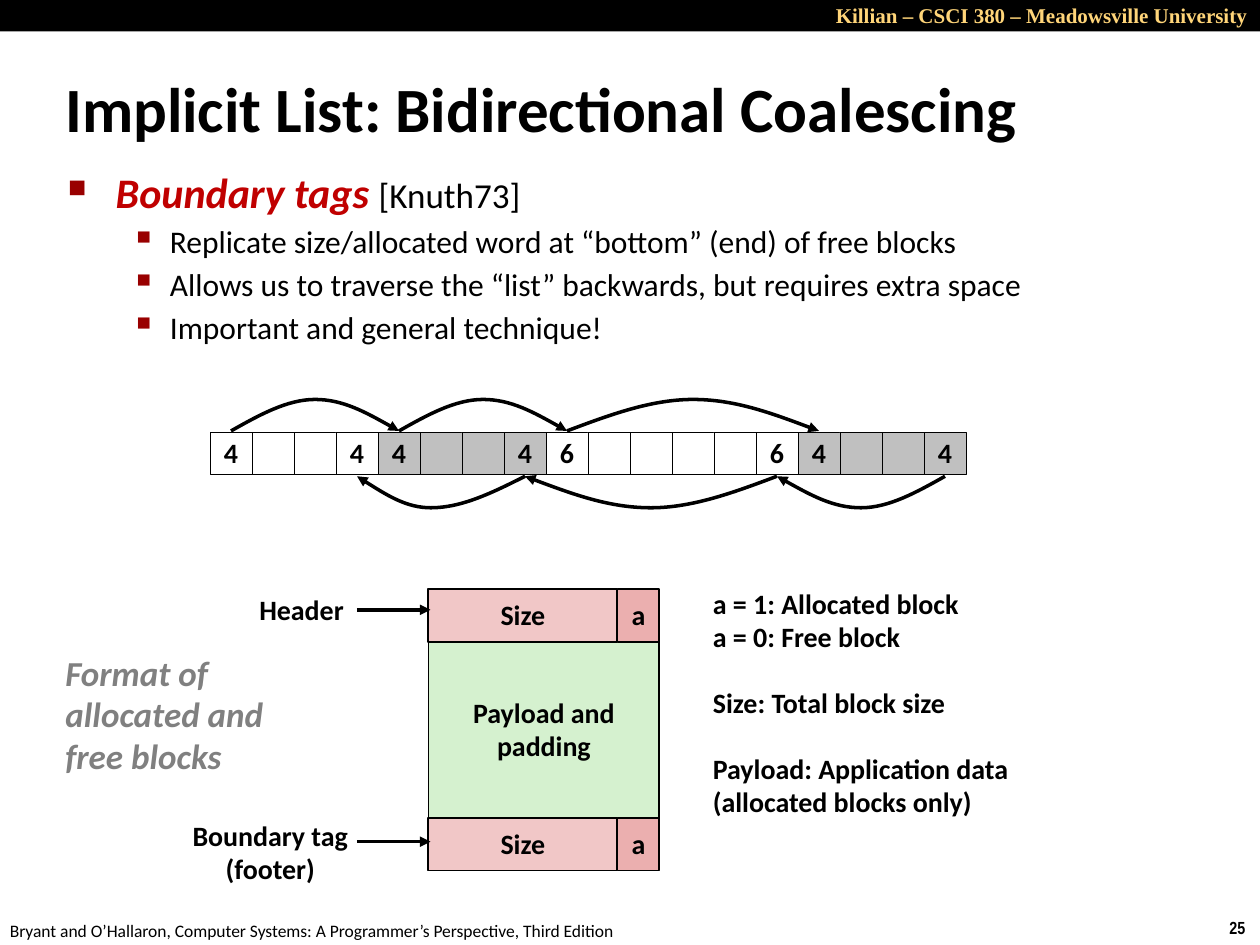
"""Slide on boundary tags for bidirectional coalescing of an implicit list."""
from lxml import etree
from pptx import Presentation, util as u
from pptx.dml import color
from pptx.enum import shapes, text
from pptx.oxml import ns

HUES = {"black": "000000", "white": "FFFFFF", "gray": "C0C0C0", "dim": "808080",
        "gold": "FFD579", "red": "C00000", "mark": "990000",
        "pink": "F1C7C7", "rose": "EBAFAF", "green": "D5F1CF"}
LEFT, MID, RIGHT = text.PP_ALIGN.LEFT, text.PP_ALIGN.CENTER, text.PP_ALIGN.RIGHT


def hue(name):
    return color.RGBColor.from_string(HUES[name])


def sub(node, tag, **attrs):
    return etree.SubElement(node, ns.qn(tag), **attrs)


class Deck:
    """Style and current slide, on a grid of 30 columns by 22.5 rows."""

    def __init__(self):
        self.prs = Presentation()
        self.prs.slide_width, self.prs.slide_height = u.Inches(10), u.Inches(7.5)
        self.unit = self.prs.slide_width / 30
        self.slide = self.prs.slides.add_slide(self.prs.slide_layouts[6])
        self.items = self.slide.shapes

    def grid(self, *vals):
        return [round(v * self.unit) for v in vals]

    def style(self, run, size=16, tint="black", bold=True, slant=False, face="Calibri"):
        font = run.font
        font.name, font.size, font.bold, font.italic = face, u.Pt(size), bold, slant
        font.color.rgb = hue(tint)

    def fill(self, frame, words, align, lead, look):
        frame.text = words
        for para in frame.paragraphs:
            para.alignment, para.line_spacing = align, lead
            for run in para.runs:
                self.style(run, **look)

    def label(self, at, words, align=LEFT, wrap=False, lead=0.98, **look):
        frame = self.items.add_textbox(*self.grid(*at)).text_frame
        frame.word_wrap = wrap
        self.fill(frame, words, align, lead, look)
        return frame

    def rect(self, at, tint, words="", line=1):
        box = self.items.add_shape(shapes.MSO_SHAPE.RECTANGLE, *self.grid(*at))
        box.shadow.inherit = False
        box.fill.solid()
        box.fill.fore_color.rgb = hue(tint)
        if line:
            box.line.color.rgb, box.line.width = hue("black"), u.Pt(line)
        else:
            box.line.fill.background()
        if words:
            frame = box.text_frame
            frame.word_wrap = False
            frame.vertical_anchor = text.MSO_ANCHOR.MIDDLE
            self.fill(frame, words, MID, 0.98, {})

    def tip(self, item):
        item.line.color.rgb, item.line.width = hue("black"), u.Pt(2)
        sub(item.line._get_or_add_ln(), "a:tailEnd", type="triangle")

    def arrow(self, x, y, end):
        line = self.items.add_connector(shapes.MSO_CONNECTOR.STRAIGHT,
                                        *self.grid(x, y, end, y))
        self.tip(line)
        sub(line.element.spPr, "a:effectLst")

    def arc(self, start, end, base, peak, top=None):
        top = (start + end) / 2 if top is None else top
        half = (base + peak) / 2
        rise, drop = (top - start) / 3, (end - top) / 3
        pts = [(start + rise, half), (top - rise, peak), (top, peak),
               (top + drop, peak), (end - drop, half), (end, base)]
        pen = self.items.build_freeform(*self.grid(start, base))
        pen.add_line_segments([self.grid(*p) for p in pts], close=False)
        curve = pen.convert_to_shape()
        curve.shadow.inherit = False
        curve.fill.background()
        for i, seg in enumerate(list(curve.element.iter(ns.qn("a:lnTo")))):
            if i % 3 == 0:
                bend = sub(seg.getparent(), "a:cubicBezTo")
            bend.append(seg[0])
            seg.getparent().remove(seg)
        self.tip(curve)

    def bullet(self, para, sign, scale, left, hang, gap):
        para.space_before = u.Pt(gap)
        props = para._p.get_or_add_pPr()
        props.set("marL", str(u.Inches(left)))
        props.set("indent", str(-u.Inches(hang)))
        sub(sub(props, "a:buClr"), "a:srgbClr", val=HUES["mark"])
        sub(props, "a:buSzPct", val=str(scale * 1000))
        sub(props, "a:buChar", char=sign)

    def points(self, at, head, cite, lines):
        frame = self.label(at, "\n".join([head, *lines]), wrap=True, lead=0.88,
                           size=18, bold=False)
        first, *rest = frame.paragraphs
        first.line_spacing = 0.83
        self.style(first.runs[0], 24, "red", slant=True)
        run = first.add_run()
        run.text = cite
        self.style(run, 20, bold=False)
        self.bullet(first, "■", 60, 0.38, 0.38, 12.5)
        for para in rest:
            self.bullet(para, "▪", 110, 0.81, 0.31, 5.6)


def main():
    deck = Deck()
    deck.rect((0, 0, 30, 0.75), "black", line=0)
    deck.label((18.24, -0.09, 11.76, 0.9), "Killian – CSCI 380 – Meadowsville University",
               RIGHT, True, 1, size=12, tint="gold", face="Times New Roman")
    deck.label((28.98, 21.69, 1.02, 0.81), "25", lead=1, size=10, face="Arial Narrow")
    deck.label((-0.06, 21.75, 15.24, 0.81),
               "Bryant and O’Hallaron, Computer Systems: "
               "A Programmer’s Perspective, Third Edition", lead=1, size=10, bold=False)
    title = deck.label((1.26, 1.62, 28.74, 1.89), "Implicit List: Bidirectional Coalescing",
                       wrap=True, lead=1, size=36)
    title.vertical_anchor = text.MSO_ANCHOR.MIDDLE
    deck.points((1.32, 4.02, 27.27, 4.35), "Boundary tags ", "[Knuth73]",
                ["Replicate size/allocated word at “bottom” (end) of free blocks",
                 "Allows us to traverse the “list” backwards, but requires extra space",
                 "Important and general technique!"])

    col = 5
    for size, tint in ((4, "white"), (4, "gray"), (6, "white"), (4, "gray")):
        for i in range(size):
            words = str(size) if i in (0, size - 1) else ""
            deck.rect((col + i, 10.29, 1, 1), tint, words, 0.25)
        col += size
    for start, end in ((5.5, 9.5), (9.5, 13.5), (13.5, 19.5)):
        deck.arc(start, end, 10.26, 9.51)
    for start, end, top in ((12.5, 8.5, 10.26), (18.5, 12.5, None), (22.5, 18.5, None)):
        deck.arc(start, end, 11.34, 12.09, top)

    deck.rect((10.2, 15.27, 5.5, 4.22), "green", "Payload and\npadding")
    for row in (14.03, 19.48):
        deck.rect((10.2, row, 4.5, 1.25), "pink", "Size")
        deck.rect((14.7, row, 1, 1.25), "rose", "a")
    for row in (14.52, 20.04):
        deck.arrow(8.5, row, 10.25)
    deck.label((5.88, 14, 2.64, 1.11), "Header")
    deck.label((4.26, 19.38, 4.35, 1.89), "Boundary tag\n(footer)", MID)
    deck.label((1.26, 15.42, 5.34, 3.27), "Format of\nallocated and\nfree blocks",
               size=20, tint="dim", slant=True)
    notes = deck.label((16.68, 13.86, 7.71, 6.66),
                       "a = 1: Allocated block\na = 0: Free block\nSize: Total block size\n"
                       "Payload: Application data\n(allocated blocks only)")
    for i in (2, 3):
        notes.paragraphs[i].space_before = u.Pt(19)
    deck.prs.save("out.pptx")


if __name__ == "__main__":
    main()
